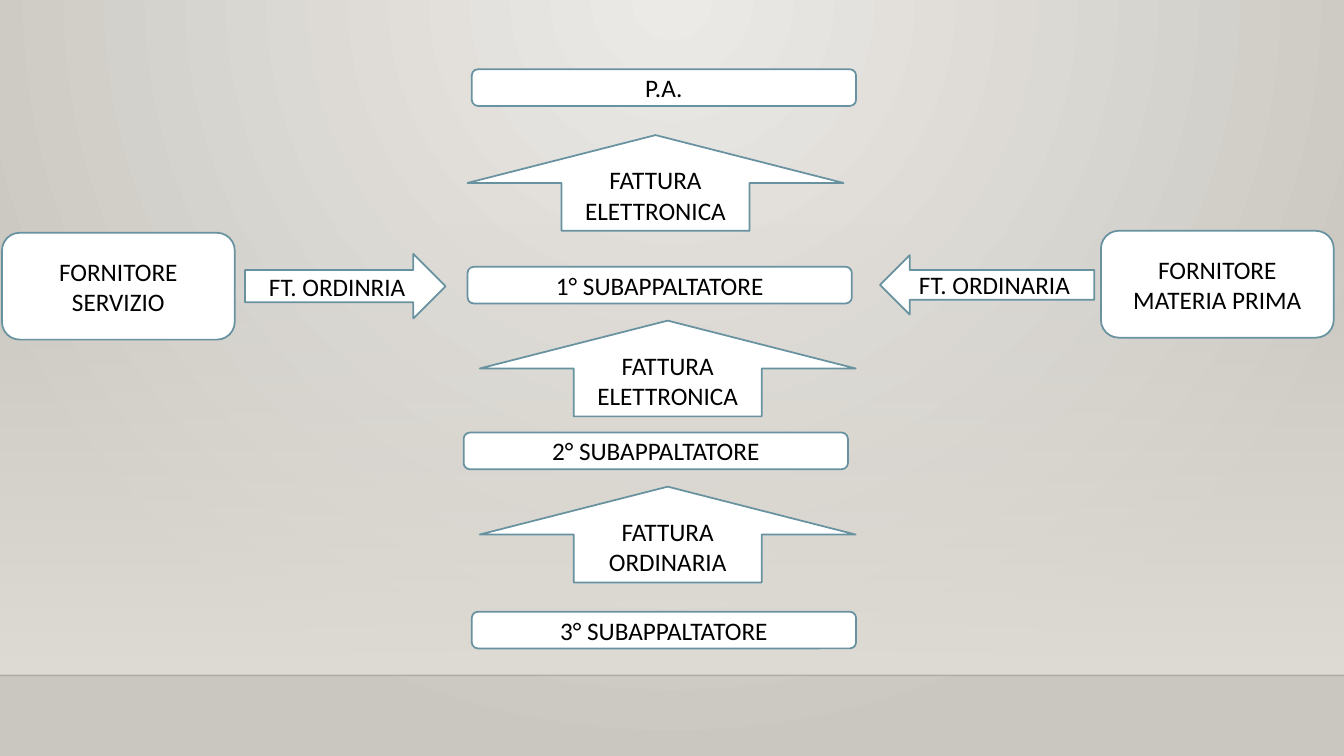
import dataclasses
import lxml.etree
import pptx
import pptx.dml.color
import pptx.enum.shapes
import pptx.enum.text
import pptx.oxml.ns
import pptx.util

Pt = pptx.util.Pt
qn = pptx.oxml.ns.qn
ShapeKind = pptx.enum.shapes.MSO_SHAPE


@dataclasses.dataclass(frozen=True)
class Theme:
    glow: str = "ECEAE7"
    edge: str = "CAC7C1"
    wall: str = "DFDBD5"
    floor_line: str = "000001"
    box_fill: str = "FFFFFF"
    box_line: str = "6892A0"
    text: str = "000000"
    font: str = "Calibri"
    text_size: float = 18
    box_line_width: float = 1.25
    floor_line_width: float = 1


class InvoiceSlide:
    def __init__(self, presentation, theme):
        self.theme = theme
        self.slide = presentation.slides.add_slide(presentation.slide_layouts[6])

    def color(self, value):
        return pptx.dml.color.RGBColor.from_string(value)

    def set_opacity(self, color_element, percent):
        alpha = lxml.etree.SubElement(color_element, qn("a:alpha"))
        alpha.set("val", str(percent * 1000))

    def set_gradient(self, fill, first, last):
        fill.gradient()
        for stop, value, position in zip(fill.gradient_stops, (first, last), (0, 1)):
            stop.color.rgb = self.color(value)
            stop.position = position

    def background(self):
        self.set_gradient(self.slide.background.fill, self.theme.glow, self.theme.edge)
        gradient = next(self.slide.element.iter(qn("a:gradFill")))
        gradient.remove(gradient.find(qn("a:lin")))
        radial = lxml.etree.SubElement(gradient, qn("a:path"))
        radial.set("path", "circle")
        focus = lxml.etree.SubElement(radial, qn("a:fillToRect"))
        for side, percent in (("l", 43), ("t", 0), ("r", 43), ("b", 100)):
            focus.set(side, str(percent * 1000))

    def wall(self, left, top, width, height):
        shape = self.slide.shapes.add_shape(
            ShapeKind.RECTANGLE, Pt(left), Pt(top), Pt(width), Pt(height))
        shape.shadow.inherit = False
        shape.line.fill.background()
        self.set_gradient(shape.fill, self.theme.wall, self.theme.wall)
        shape.fill.gradient_angle = 270
        self.set_opacity(next(shape.element.iter(qn("a:srgbClr"))), 0)

    def floor_line(self, left, right, top):
        connector = self.slide.shapes.add_connector(
            pptx.enum.shapes.MSO_CONNECTOR.STRAIGHT, Pt(left), Pt(top), Pt(right), Pt(top))
        connector.line.color.rgb = self.color(self.theme.floor_line)
        connector.line.width = Pt(self.theme.floor_line_width)
        self.set_opacity(next(connector.element.iter(qn("a:srgbClr"))), 20)
        lxml.etree.SubElement(connector.element.spPr, qn("a:effectLst"))

    def box(self, kind, text, left, top, width, height):
        shape = self.slide.shapes.add_shape(kind, Pt(left), Pt(top), Pt(width), Pt(height))
        shape.shadow.inherit = False
        shape.fill.solid()
        shape.fill.fore_color.rgb = self.color(self.theme.box_fill)
        shape.line.color.rgb = self.color(self.theme.box_line)
        shape.line.width = Pt(self.theme.box_line_width)
        frame = shape.text_frame
        frame.word_wrap = True
        frame.vertical_anchor = pptx.enum.text.MSO_ANCHOR.MIDDLE
        paragraph = frame.paragraphs[0]
        paragraph.alignment = pptx.enum.text.PP_ALIGN.CENTER
        run = paragraph.add_run()
        run.text = text
        run.font.name = self.theme.font
        run.font.size = Pt(self.theme.text_size)
        run.font.color.rgb = self.color(self.theme.text)

    def party(self, text, left, top):
        self.box(ShapeKind.ROUNDED_RECTANGLE, text, left, top, 274.5, 26.2)

    def invoice(self, text, left, top):
        self.box(ShapeKind.UP_ARROW, text, left, top, 268.5, 68.4)

    def supplier(self, text, left, top):
        self.box(ShapeKind.ROUNDED_RECTANGLE, text, left, top, 166.3, 76.3)


def main():
    presentation = pptx.Presentation()
    presentation.slide_width = Pt(960)
    presentation.slide_height = Pt(540)

    slide = InvoiceSlide(presentation, Theme())
    slide.background()
    slide.wall(0, 159, 960, 323.4)
    slide.floor_line(0, 960, 482.4)

    for text, left, top in (
        ("3° SUBAPPALTATORE", 337, 437),
        ("1° SUBAPPALTATORE", 334, 190.6),
        ("2° SUBAPPALTATORE", 331.2, 309),
        ("P.A.", 337, 49.5),
    ):
        slide.party(text, left, top)

    for text, left, top in (
        ("FATTURA ELETTRONICA", 342.7, 229),
        ("FATTURA ORDINARIA", 342.7, 347.6),
        ("FATTURA ELETTRONICA", 334, 96.5),
    ):
        slide.invoice(text, left, top)

    slide.supplier("FORNITORE SERVIZIO", 1.4, 166.3)
    slide.box(ShapeKind.RIGHT_ARROW, "FT. ORDINRIA", 175, 181.4, 143.3, 46.1)
    slide.box(ShapeKind.LEFT_ARROW, "FT. ORDINARIA", 628.6, 182.2, 153, 42.5)
    slide.supplier("FORNITORE MATERIA PRIMA", 786.4, 164.9)

    presentation.save("out.pptx")


if __name__ == "__main__":
    main()
